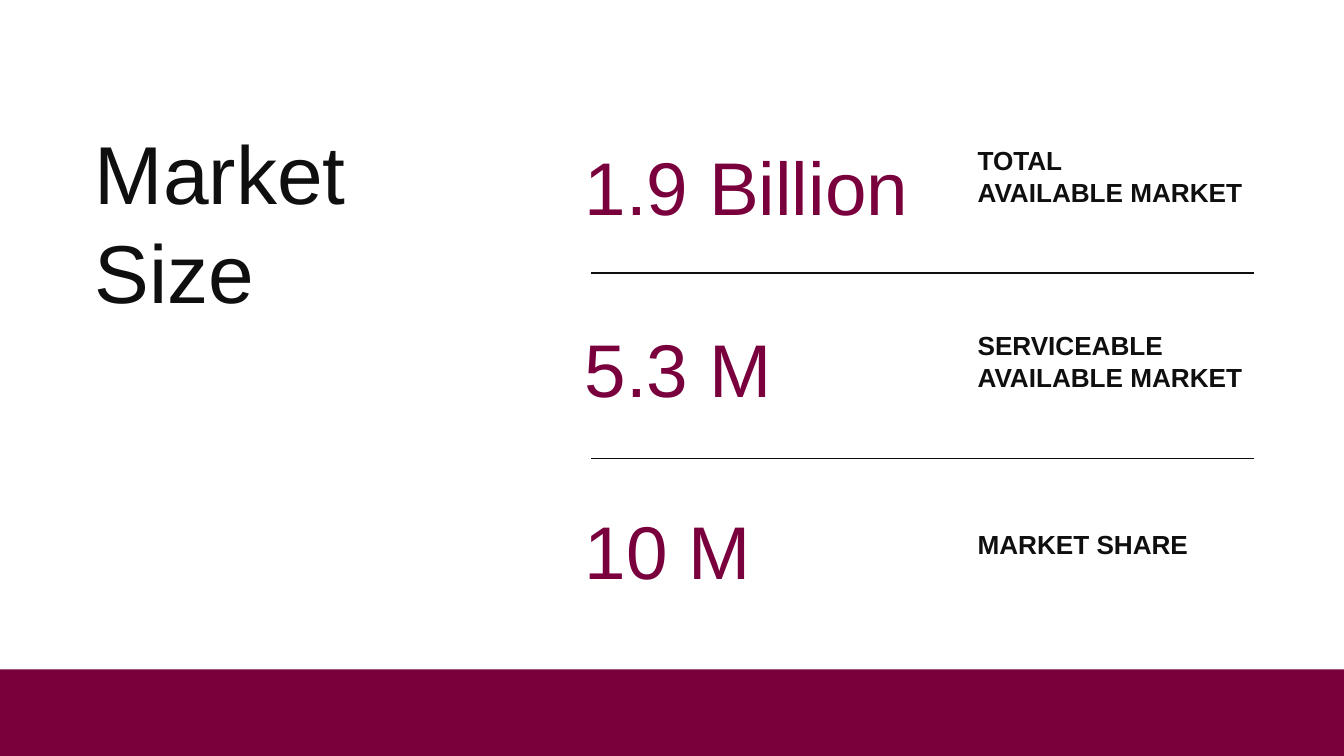
from dataclasses import dataclass

from lxml.etree import SubElement
from pptx import Presentation
from pptx.dml.color import RGBColor
from pptx.enum.shapes import MSO_CONNECTOR, MSO_SHAPE
from pptx.enum.text import MSO_ANCHOR, MSO_AUTO_SIZE, PP_ALIGN
from pptx.oxml.ns import qn
from pptx.shapes.base import BaseShape
from pptx.slide import Slide
from pptx.util import Inches, Pt

COLORS = {"ink": "0F0F0F", "number": "79003C", "band": "7A003C"}
FONT = "Arial"
NUMBER_LEFT, NUMBER_WIDTH, NUMBER_HEIGHT = 8.63, 5.28, 1.14
LABEL_LEFT, LABEL_WIDTH, LABEL_HEIGHT = 14.45, 4.2, 1.08
RULE_LEFT, RULE_RIGHT = 8.8, 18.66
RULE_TOPS = (4.06, 6.82)


@dataclass(frozen=True)
class Market:
    number: str
    label: str
    number_top: float
    label_top: float


MARKETS = (
    Market("1.9 Billion", "TOTAL\vAVAILABLE MARKET", 1.93, 2.07),
    Market("5.3 M", "SERVICEABLE AVAILABLE MARKET", 4.65, 4.83),
    Market("10 M", "MARKET SHARE", 7.36, 7.78),
)


def place(shape: BaseShape, left: float, top: float, width: float, height: float) -> None:
    shape.left, shape.top = Inches(left), Inches(top)
    shape.width, shape.height = Inches(width), Inches(height)


def write(shape: BaseShape, text: str, *, size: float, color: str = "ink",
          bold: bool = False, spacing: float | None = None,
          inset_left: float = 0.07, inset_top: float = 0.07) -> None:
    frame = shape.text_frame
    frame.word_wrap = True
    frame.auto_size = MSO_AUTO_SIZE.NONE
    frame.vertical_anchor = MSO_ANCHOR.TOP
    frame.margin_left, frame.margin_top = Inches(inset_left), Inches(inset_top)
    frame.margin_right = frame.margin_bottom = 0
    para = frame.paragraphs[0]
    para.text = text
    para.alignment = PP_ALIGN.LEFT
    para.space_before = Pt(0)
    para.line_spacing = Pt(spacing) if spacing else 1.0
    for span in para.runs:
        span.font.name = FONT
        span.font.size = Pt(size)
        span.font.bold = bold
        span.font.color.rgb = RGBColor.from_string(COLORS[color])


def add_title(page: Slide) -> None:
    title = page.shapes.title
    place(title, 1.34, 1.71, 5.44, 3.06)
    write(title, "Market Size", size=88, spacing=106, inset_top=0.1)


def add_market(page: Slide, market: Market) -> None:
    number = page.shapes.add_textbox(0, 0, 0, 0)
    place(number, NUMBER_LEFT, market.number_top, NUMBER_WIDTH, NUMBER_HEIGHT)
    write(number, market.number, size=80, color="number", inset_top=0.16)
    label = page.shapes.add_textbox(0, 0, 0, 0)
    place(label, LABEL_LEFT, market.label_top, LABEL_WIDTH, LABEL_HEIGHT)
    write(label, market.label, size=28, bold=True, spacing=34, inset_left=0.1)


def add_rule(page: Slide, top: float) -> None:
    rule = page.shapes.add_connector(
        MSO_CONNECTOR.STRAIGHT,
        Inches(RULE_LEFT), Inches(top), Inches(RULE_RIGHT), Inches(top))
    rule.line.color.rgb = RGBColor.from_string(COLORS["ink"])
    rule.line.width = Pt(1.5)
    SubElement(rule._element.spPr, qn("a:effectLst"))


def add_band(page: Slide) -> None:
    band = page.shapes.add_shape(MSO_SHAPE.RECTANGLE, 0, 0, 0, 0)
    place(band, 0, 9.96, 20, 1.29)
    band.shadow.inherit = False
    band.fill.solid()
    band.fill.fore_color.rgb = RGBColor.from_string(COLORS["band"])
    band.line.fill.background()


def main() -> None:
    deck = Presentation()
    deck.slide_width, deck.slide_height = Inches(20), Inches(11.25)
    page = deck.slides.add_slide(deck.slide_layouts.get_by_name("Title Only"))
    add_title(page)
    for market in MARKETS:
        add_market(page, market)
    for top in RULE_TOPS:
        add_rule(page, top)
    add_band(page)
    deck.save("out.pptx")


if __name__ == "__main__":
    main()
